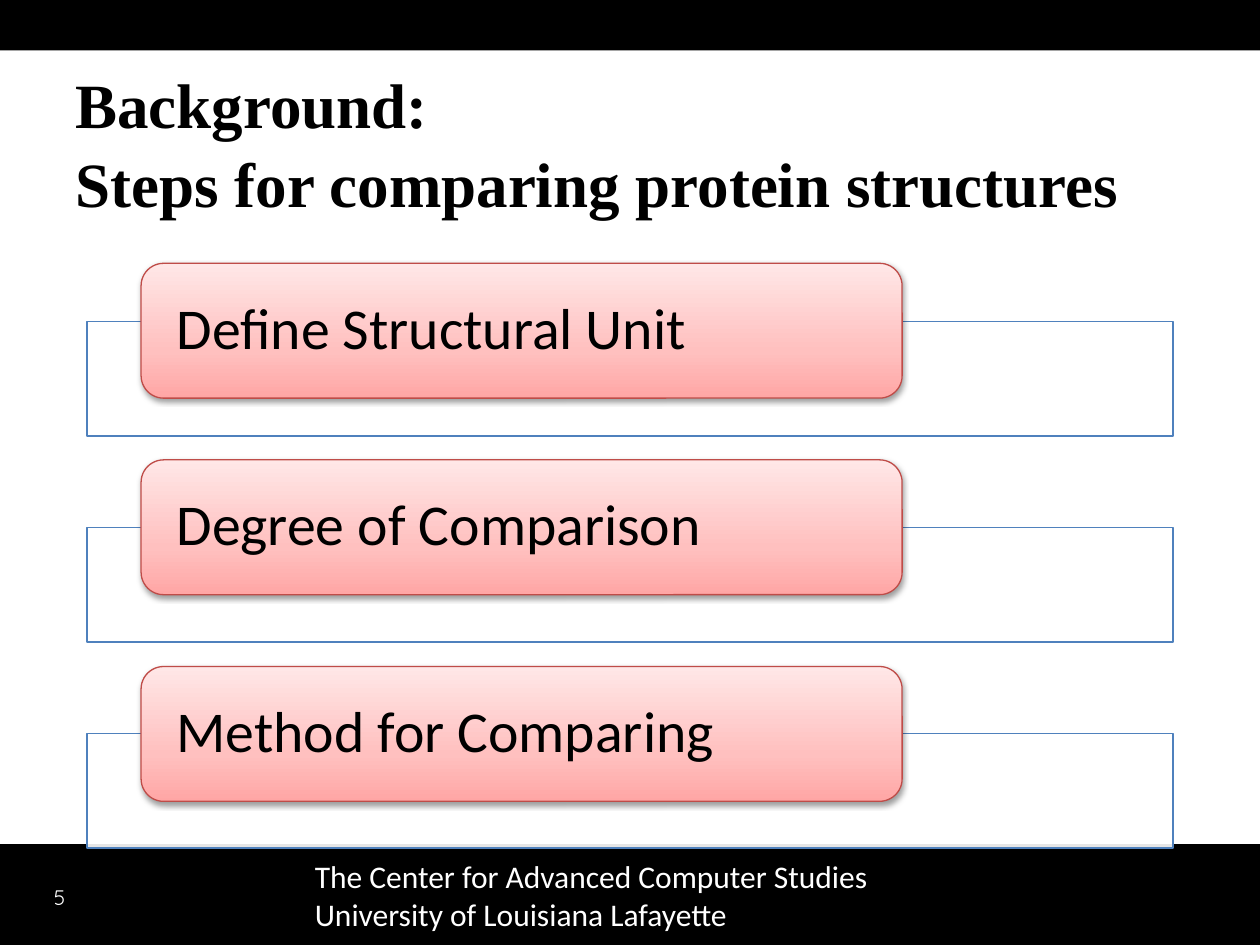
from lxml.etree import SubElement
from pptx import Presentation
from pptx.dml.color import RGBColor
from pptx.enum.shapes import MSO_SHAPE
from pptx.enum.text import MSO_ANCHOR, PP_ALIGN
from pptx.oxml import parse_xml
from pptx.oxml.ns import nsdecls, qn
from pptx.util import Inches, Pt

COLORS = {
    "black": "000000",
    "white": "FFFFFF",
    "blue": "4F81BD",
    "red": "BF4C48",
    "rose": "FFA6A5",
    "pink": "FFC0BF",
    "blush": "FFE7E7",
}
COLUMNS, ROWS = 100, 75
STEP_TOPS = {
    "Define Structural Unit": 20.9,
    "Degree of Comparison": 36.5,
    "Method for Comparing": 52.9,
}
FRAME_TOP, FRAME_PITCH = 25.5, 16.35


class SlideBuilder:
    """Draws styled elements on one slide, placed by columns and rows of a grid."""

    def __init__(self, presentation):
        self.column = presentation.slide_width / COLUMNS
        self.row = presentation.slide_height / ROWS
        self.slide = presentation.slides.add_slide(presentation.slide_layouts[6])

    def place(self, left, top, width, height):
        return (round(left * self.column), round(top * self.row),
                round(width * self.column), round(height * self.row))

    def color(self, name):
        return RGBColor.from_string(COLORS[name])

    def block(self, box, fill, line=None, kind=MSO_SHAPE.RECTANGLE):
        shape = self.slide.shapes.add_shape(kind, *self.place(*box))
        shape.shadow.inherit = False
        shape.fill.solid()
        shape.fill.fore_color.rgb = self.color(fill)
        if line:
            shape.line.color.rgb = self.color(line)
            shape.line.width = Pt(0.75)
        else:
            shape.line.fill.background()
        return shape

    def set_text(self, frame, text, size, font, color="black", bold=False, spacing=None):
        frame.word_wrap = True
        frame.text = text
        for paragraph in frame.paragraphs:
            paragraph.alignment = PP_ALIGN.LEFT
            paragraph.line_spacing = spacing
            for run in paragraph.runs:
                run.font.size = Pt(size)
                run.font.name = font
                run.font.bold = bold
                run.font.color.rgb = self.color(color)

    def text(self, box, text, size, font, anchor=MSO_ANCHOR.TOP, **style):
        frame = self.slide.shapes.add_textbox(*self.place(*box)).text_frame
        frame.vertical_anchor = anchor
        self.set_text(frame, text, size, font, **style)

    def frame(self, top):
        shape = self.block((6.9, top, 86.2, 9.1), "white", "blue")
        tint = shape._element.spPr.find(qn("a:solidFill"))[0]
        SubElement(tint, qn("a:alpha")).set("val", "90000")

    def step(self, top, label):
        shape = self.block((11.2, top, 60.4, 10.7), "rose", "red",
                           MSO_SHAPE.ROUNDED_RECTANGLE)
        self.shade(shape)
        frame = shape.text_frame
        frame.margin_left = frame.margin_right = Inches(0.23)
        frame.margin_top = frame.margin_bottom = 0
        frame.vertical_anchor = MSO_ANCHOR.MIDDLE
        self.set_text(frame, label, 33, "Calibri", spacing=0.9)

    def shade(self, shape):
        stops = "".join(
            f'<a:gs pos="{share * 1000}"><a:srgbClr val="{COLORS[name]}"/></a:gs>'
            for share, name in ((0, "rose"), (35, "pink"), (100, "blush")))
        gradient = parse_xml(
            f'<a:gradFill {nsdecls("a")} rotWithShape="1"><a:gsLst>{stops}</a:gsLst>'
            '<a:lin ang="16200000" scaled="0"/></a:gradFill>')
        properties = shape._element.spPr
        properties.replace(properties.find(qn("a:solidFill")), gradient)
        shadow = parse_xml(
            f'<a:outerShdw {nsdecls("a")} blurRad="{Pt(3.1)}" dist="{Pt(1.6)}" '
            f'dir="5400000" rotWithShape="0"><a:srgbClr val="{COLORS["black"]}">'
            '<a:alpha val="38000"/></a:srgbClr></a:outerShdw>')
        properties.find(qn("a:effectLst")).append(shadow)


def main():
    presentation = Presentation()
    presentation.slide_width = Inches(10)
    presentation.slide_height = Inches(7.5)
    builder = SlideBuilder(presentation)
    builder.block((0, 0, COLUMNS, 4), "black")
    builder.block((0, 67, COLUMNS, 8), "black")
    builder.text((5, 4.4, 90, 10.5),
                 "Background:\vSteps for comparing protein structures",
                 36, "Times New Roman", bold=True, spacing=1.05)
    for index, (label, top) in enumerate(STEP_TOPS.items()):
        builder.frame(FRAME_TOP + index * FRAME_PITCH)
        builder.step(top, label)
    builder.text((3.3, 69.2, 22.5, 4), "5", 12, "Quicksand",
                 MSO_ANCHOR.MIDDLE, color="white")
    builder.text((24, 67.5, 50.2, 7.5),
                 "The Center for Advanced Computer Studies\n"
                 "University of Louisiana Lafayette",
                 18, "Calibri", color="white")
    presentation.save("out.pptx")


if __name__ == "__main__":
    main()
